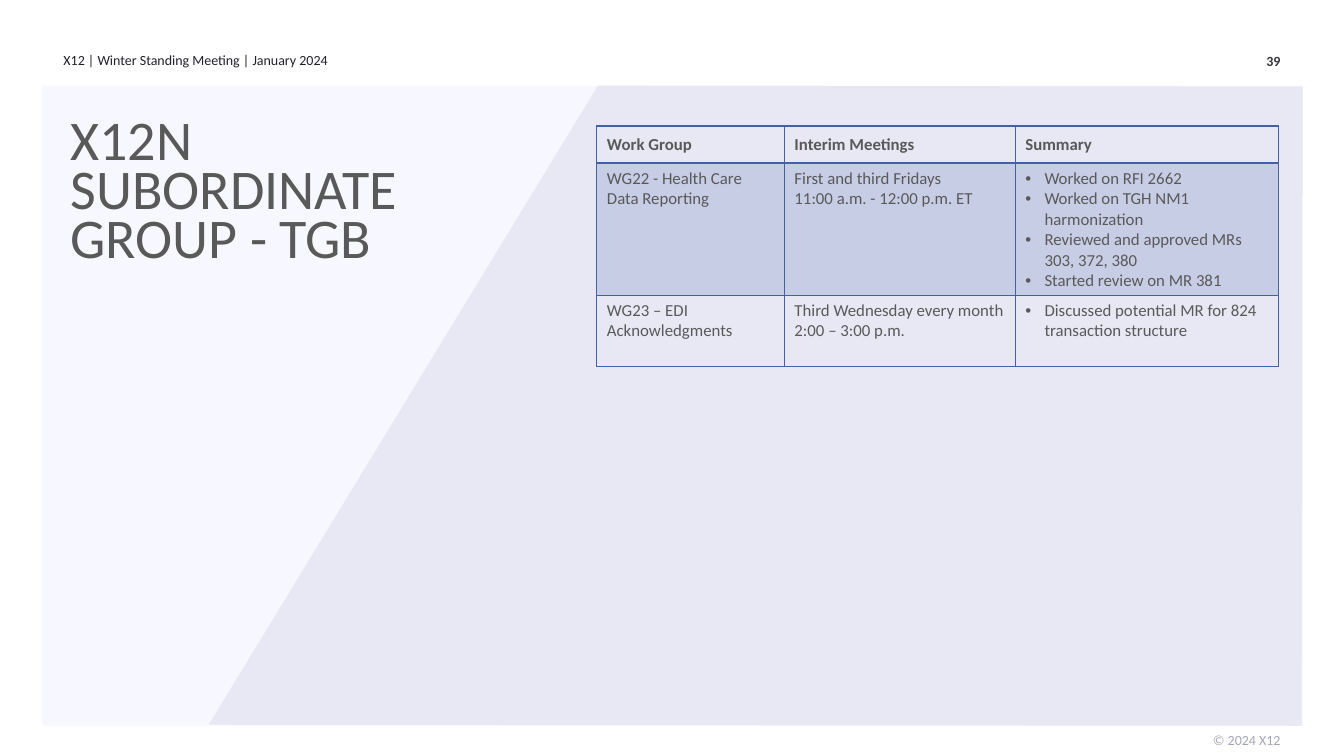
from lxml.etree import SubElement
from pptx import Presentation
from pptx.dml.color import RGBColor
from pptx.enum.shapes import MSO_SHAPE as Preset
from pptx.enum.text import MSO_ANCHOR as Anchor, PP_ALIGN as Align
from pptx.oxml.ns import qn
from pptx.util import Pt

PX = 9144  # 100 px to the inch
FONT = "Calibri"
GREY = "595959"
BLUE = "4361A3"

COLUMN_WIDTHS = [186, 229, 261]
ROW_HEIGHTS = [37, 131, 71]
WORK_GROUPS = [
    ["Work Group", "Interim Meetings", "Summary"],
    ["WG22 - Health Care Data Reporting",
     "First and third Fridays\n11:00 a.m. - 12:00 p.m. ET",
     "Worked on RFI 2662\nWorked on TGH NM1 harmonization\n"
     "Reviewed and approved MRs 303, 372, 380\nStarted review on MR 381"],
    ["WG23 – EDI Acknowledgments",
     "Third Wednesday every month\n2:00 – 3:00 p.m.",
     "Discussed potential MR for 824 transaction structure"],
]


def color(value):
    return RGBColor.from_string(value)


class SlideBuilder:
    """Holds the style and the current slide."""

    def __init__(self, slide):
        self.slide = slide
        self.shapes = slide.shapes

    def paint(self, shape, fill):
        shape.shadow.inherit = False
        shape.fill.solid()
        shape.fill.fore_color.rgb = color(fill)
        shape.line.fill.background()

    def rectangle(self, left, top, width, height, fill):
        box = [length * PX for length in (left, top, width, height)]
        self.paint(self.shapes.add_shape(Preset.RECTANGLE, *box), fill)

    def polygon(self, points, fill):
        builder = self.shapes.build_freeform(*points[0], scale=PX)
        builder.add_line_segments(points[1:], close=True)
        self.paint(builder.convert_to_shape(), fill)

    def format_runs(self, paragraph, size, ink, bold=False):
        for run in paragraph.runs:
            run.font.name = FONT
            run.font.size = Pt(size)
            run.font.bold = bold
            run.font.color.rgb = color(ink)

    def text(self, content, left, top, width, height, size, ink,
             bold=False, align=Align.LEFT, line_spacing=None):
        box = [length * PX for length in (left, top, width, height)]
        frame = self.shapes.add_textbox(*box).text_frame
        frame.word_wrap = True
        frame.margin_left = frame.margin_right = 0
        frame.margin_top = frame.margin_bottom = 0
        frame.text = content
        paragraph = frame.paragraphs[0]
        paragraph.alignment = align
        if line_spacing:
            paragraph.line_spacing = Pt(line_spacing)
        self.format_runs(paragraph, size, ink, bold)

    def bullet(self, paragraph):
        properties = paragraph._p.get_or_add_pPr()
        properties.set("marL", str(19 * PX))
        properties.set("indent", str(-19 * PX))
        SubElement(properties, qn("a:buFont"), typeface="Arial")
        SubElement(properties, qn("a:buChar"), char="•")

    def borders(self, cell, widths):
        """Draw the left, right, top and bottom borders, widths in points."""
        properties = cell._tc.get_or_add_tcPr()
        for side, width in zip("LRTB", widths):
            line = SubElement(properties, qn(f"a:ln{side}"), w=str(Pt(width)))
            solid = SubElement(line, qn("a:solidFill"))
            SubElement(solid, qn("a:srgbClr"), val=BLUE)

    def tint(self, cell, opacity):
        cell.fill.solid()
        cell.fill.fore_color.rgb = color(BLUE)
        swatch = cell._tc.tcPr.find(f"{qn('a:solidFill')}/{qn('a:srgbClr')}")
        SubElement(swatch, qn("a:alpha"), val=str(opacity * 1000))

    def table(self, rows, left, top, widths, heights):
        """Add a table with a bold header, tinted odd rows and a bulleted last column."""
        frame = self.shapes.add_table(
            len(rows), len(widths), left * PX, top * PX,
            sum(widths) * PX, sum(heights) * PX)
        table = frame.table
        table.first_row = table.horz_banding = False
        for column, width in zip(table.columns, widths):
            column.width = width * PX
        for row_index, (row, height) in enumerate(zip(rows, heights)):
            table.rows[row_index].height = height * PX
            is_header = row_index == 0
            for column_index, content in enumerate(row):
                cell = table.cell(row_index, column_index)
                cell.text_frame.text = content
                cell.vertical_anchor = Anchor.MIDDLE if is_header else Anchor.TOP
                self.borders(cell, [1, 1, 2 if row_index == 1 else 1,
                                    2 if is_header else 1])
                if row_index % 2:
                    self.tint(cell, 20)
                else:
                    cell.fill.background()
                for paragraph in cell.text_frame.paragraphs:
                    if not is_header and column_index == len(widths) - 1:
                        self.bullet(paragraph)
                    self.format_runs(paragraph, 12, GREY, is_header)


def main():
    presentation = Presentation()
    presentation.slide_width = 1333 * PX
    presentation.slide_height = 750 * PX
    builder = SlideBuilder(
        presentation.slides.add_slide(presentation.slide_layouts[6]))

    builder.rectangle(42, 85, 1250, 635, "F7F7FF")
    builder.polygon([(207, 719), (593, 85), (1292, 86), (1291, 720)], "E8E8F5")
    builder.text("X12 | Winter Standing Meeting | January 2024",
                 63, 51, 450, 25, 10, "21212B")
    builder.text("39", 1119, 52, 151, 25, 10, "363640",
                 bold=True, align=Align.RIGHT)
    builder.text("© 2024 X12", 1119, 726, 151, 25, 10, "A6A6BA",
                 align=Align.RIGHT)
    builder.text("X12N SUBORDINATE GROUP - TGB", 70, 122, 369, 190, 40, GREY,
                 line_spacing=35)
    builder.table(WORK_GROUPS, 592, 125, COLUMN_WIDTHS, ROW_HEIGHTS)
    presentation.save("out.pptx")


if __name__ == "__main__":
    main()
